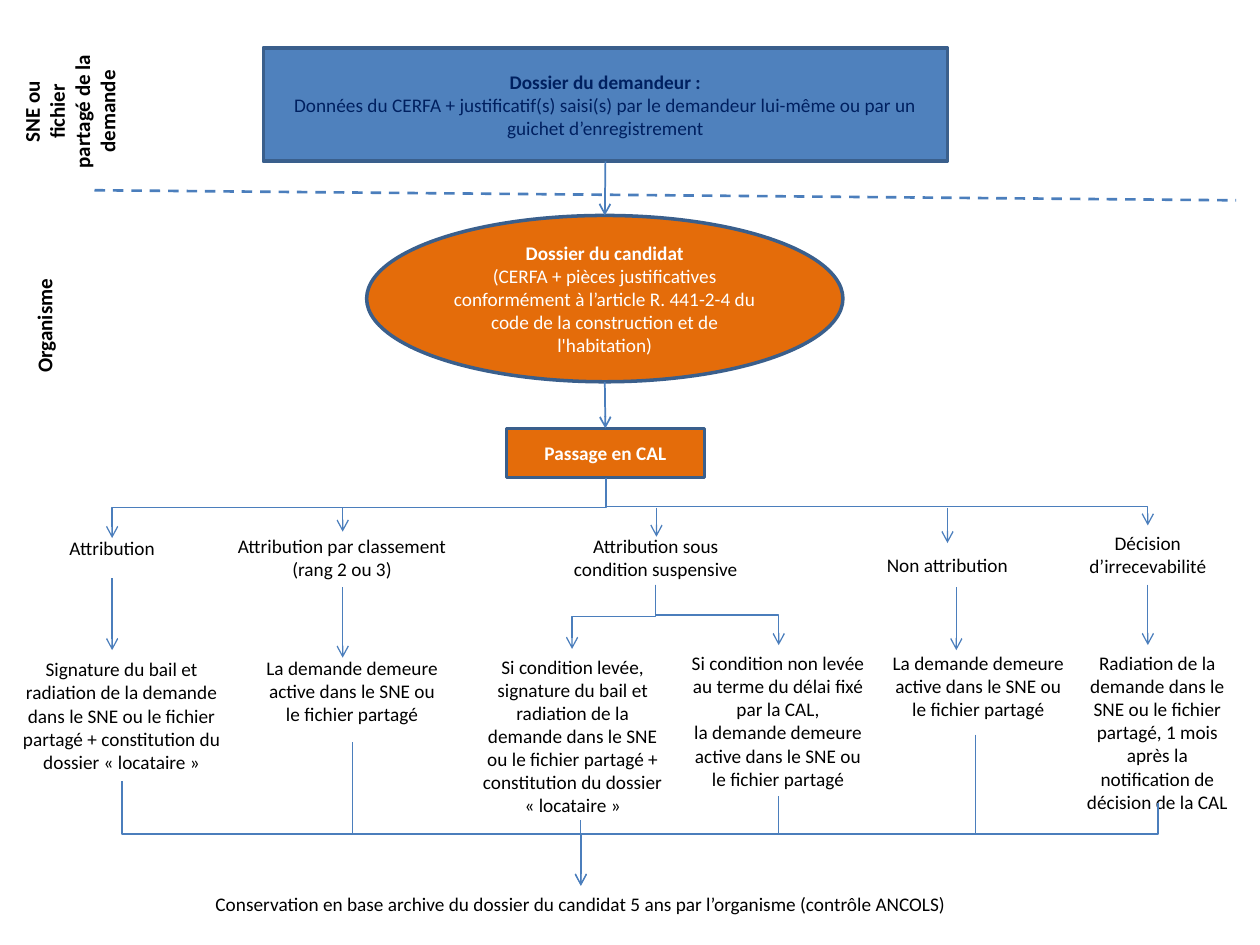
from dataclasses import dataclass

from lxml.etree import SubElement
from pptx import Presentation
from pptx.dml.color import RGBColor
from pptx.enum.dml import MSO_LINE
from pptx.enum.shapes import MSO_CONNECTOR, MSO_SHAPE
from pptx.enum.text import MSO_ANCHOR, MSO_AUTO_SIZE, PP_ALIGN
from pptx.oxml.ns import qn
from pptx.util import Inches, Pt


@dataclass(frozen=True)
class Theme:
    font: str = "Calibri"
    body: float = 11
    band: float = 12
    black: str = "000000"
    white: str = "FFFFFF"
    navy: str = "002060"
    blue: str = "4F81BD"
    orange: str = "E46C0A"
    outline: str = "3A5F8C"
    link: str = "4B7EBC"
    thin: float = 0.75
    medium: float = 1
    dashed: float = 1.5
    border: float = 2


THEME = Theme()


@dataclass(frozen=True)
class Box:
    left: float
    top: float
    width: float
    height: float

    def inner(self, left, top, width, height):
        return Box(self.left + left, self.top + top, width, height)

    def point(self, x, y):
        return self.left + x, self.top + y

    def emu(self):
        return [Inches(v) for v in (self.left, self.top, self.width, self.height)]


def rgb(value):
    return RGBColor.from_string(value)


# Text and shapes
def write(frame, text, color=THEME.black, size=THEME.body, bold_lines=0, align=PP_ALIGN.CENTER):
    frame.word_wrap = True
    frame.text = text
    for index, paragraph in enumerate(frame.paragraphs):
        paragraph.alignment = align
        for run in paragraph.runs:
            run.font.name = THEME.font
            run.font.size = Pt(size)
            run.font.bold = index < bold_lines
            run.font.color.rgb = rgb(color)


def add_label(slide, box, text, **style):
    label = slide.shapes.add_textbox(*box.emu())
    write(label.text_frame, text, **style)
    label.text_frame.auto_size = MSO_AUTO_SIZE.SHAPE_TO_FIT_TEXT
    return label


def add_band_title(slide, box, text):
    title = add_label(slide, box, text, size=THEME.band, bold_lines=1)
    title.text_frame._txBody.bodyPr.set("vert", "vert270")
    return title


def add_step(slide, preset, box, text, fill, color):
    step = slide.shapes.add_shape(preset, *box.emu())
    step.shadow.inherit = False
    step.fill.solid()
    step.fill.fore_color.rgb = rgb(fill)
    step.line.color.rgb = rgb(THEME.outline)
    step.line.width = Pt(THEME.border)
    write(step.text_frame, text, color=color, bold_lines=1)
    step.text_frame.vertical_anchor = MSO_ANCHOR.MIDDLE
    return step


# Lines and arrows
def add_link(slide, start, end, kind=MSO_CONNECTOR.STRAIGHT, width=THEME.thin, arrow=True):
    link = slide.shapes.add_connector(kind, *[Inches(v) for v in (*start, *end)])
    link.line.color.rgb = rgb(THEME.link)
    link.line.width = Pt(width)
    if arrow:
        SubElement(link.line._get_or_add_ln(), qn("a:tailEnd"), type="arrow")
    SubElement(link._element.spPr, qn("a:effectLst"))
    return link


def add_elbow(slide, start, end, bend=0.5):
    """Down, across, down: a quarter-turned elbow; bend is the share of the first drop."""
    (x1, y1), (x2, y2) = start, end
    drop, run = y2 - y1, abs(x2 - x1)
    left, top = (x1 + x2 - drop) / 2, (y1 + y2 - run) / 2
    link = add_link(slide, (left, top), (left + drop, top + run), MSO_CONNECTOR.ELBOW)
    xfrm = link._element.spPr.find(qn("a:xfrm"))
    if x2 > x1:
        xfrm.set("flipH", "1")
    xfrm.set("rot", str((270 if x2 > x1 else 90) * 60000))
    geometry = link._element.spPr.find(qn("a:prstGeom"))
    guides = geometry.find(qn("a:avLst"))
    if guides is None:
        guides = SubElement(geometry, qn("a:avLst"))
    SubElement(guides, qn("a:gd"), name="adj1", fmla=f"val {round(bend * 100000)}")


# Shared registration system
def build_request(slide, box):
    add_band_title(slide, box.inner(0.1, 0, 0.81, 1.11), "SNE ou fichier partagé de la demande")
    request = add_step(
        slide, MSO_SHAPE.RECTANGLE, box.inner(2.09, 0.05, 5.43, 0.9),
        "Dossier du demandeur :\nDonnées du CERFA + justificatif(s) saisi(s) par le demandeur "
        "lui-même ou par un guichet d’enregistrement", THEME.blue, THEME.navy)
    border = add_link(slide, box.point(0.75, 1.18), box.point(9.81, 1.26),
                      width=THEME.dashed, arrow=False)
    border.line.dash_style = MSO_LINE.DASH
    return request


# Candidate file and committee
def build_committee(slide, box, request):
    add_band_title(slide, box.inner(0.2, 0.07, 0.4, 1.61), "Organisme")
    candidate = add_step(
        slide, MSO_SHAPE.OVAL, box.inner(2.91, 0, 3.78, 1.32),
        "Dossier du candidat\n(CERFA + pièces justificatives conformément à l’article "
        "R. 441-2-4 du code de la construction et de l'habitation)", THEME.orange, THEME.white)
    committee = add_step(slide, MSO_SHAPE.RECTANGLE, box.inner(4.02, 1.69, 1.57, 0.39),
                         "Passage en CAL", THEME.orange, THEME.white)
    top = box.point(4.8, 0)
    to_candidate = add_link(slide, top, top, width=THEME.medium)
    to_candidate.begin_connect(request, 2)
    to_candidate.end_connect(candidate, 0)
    to_committee = add_link(slide, box.point(4.8, 1.32), box.point(4.8, 1.69), width=THEME.medium)
    to_committee.end_connect(committee, 0)


# Decisions and what follows from them
KEPT_ACTIVE = "La demande demeure active dans le SNE ou le fichier partagé"
LEASE = ("ignature du bail et radiation de la demande dans le SNE ou le fichier partagé "
         "+ constitution du dossier « locataire »")

# decision, its box, consequence, its box, arrow (x, start, end)
DECISIONS = [
    ("Attribution", (0.3, 0.42, 1.18, 0.29),
     "S" + LEASE, (0.02, 1.38, 1.89, 1.03), (0.89, 0.8, 1.37)),
    ("Attribution par classement (rang 2 ou 3)", (1.73, 0.4, 1.97, 0.47),
     KEPT_ACTIVE, (2.01, 1.37, 1.57, 0.66), (2.72, 0.87, 1.43)),
    ("Non attribution", (6.94, 0.55, 1.3, 0.29),
     KEPT_ACTIVE, (6.98, 1.33, 1.57, 0.66), (7.59, 0.87, 1.37)),
    ("Décision d’irrecevabilité", (8.41, 0.38, 1.4, 0.47),
     "Radiation de la demande dans le SNE ou le fichier partagé, 1 mois après la notification "
     "de décision de la CAL", (8.49, 1.33, 1.39, 1.4), (9.11, 0.85, 1.33)),
]
CONDITIONS = [
    ("Si condition levée,\ns" + LEASE, (3.7, 1.36, 1.69, 1.6), (4.54, 1.36)),
    ("Si condition non levée au terme du délai fixé par la CAL,\n"
     "la demande demeure active dans le SNE ou le fichier partagé",
     (5.39, 1.33, 1.57, 1.21), (6.18, 1.33)),
]


def build_decisions(slide, box):
    # Branches from the committee
    fork = box.point(4.81, 0)
    add_elbow(slide, fork, box.point(0.89, 0.48))
    add_elbow(slide, fork, box.point(9.11, 0.38), 0.61)
    for x, end in ((2.72, 0.43), (5.21, 0.47), (7.52, 0.52)):
        add_link(slide, box.point(x, 0.24), box.point(x, end))

    for decision, place, consequence, target, (x, start, end) in DECISIONS:
        align = PP_ALIGN.LEFT if decision == "Non attribution" else PP_ALIGN.CENTER
        add_label(slide, box.inner(*place), decision, align=align)
        add_label(slide, box.inner(*target), consequence)
        add_link(slide, box.point(x, start), box.point(x, end))

    # Conditional award splits in two
    add_label(slide, box.inner(4.38, 0.4, 1.65, 0.47), "Attribution sous condition suspensive")
    for condition, place, arrival in CONDITIONS:
        add_label(slide, box.inner(*place), condition)
        add_elbow(slide, box.point(5.2, 0.85), box.point(*arrival))


# All branches gather in the archive
def build_archive(slide, box):
    add_label(slide, box.inner(0.5, 0.83, 8.22, 0.29),
              "Conservation en base archive du dossier du candidat 5 ans par l’organisme "
              "(contrôle ANCOLS)")
    bus = 0.42
    archive = box.point(4.61, 0.83)
    for x, start in ((0.97, 0), (9.19, 0.17)):
        add_elbow(slide, box.point(x, start), archive, (bus - start) / (0.83 - start))
    for x, start in ((2.8, -0.31), (4.61, 0.31), (6.18, 0.12), (7.74, -0.37)):
        add_link(slide, box.point(x, start), box.point(x, bus), arrow=False)


def main():
    presentation = Presentation()
    presentation.slide_width, presentation.slide_height = Inches(10), Inches(7.5)
    slide = presentation.slides.add_slide(presentation.slide_layouts[6])
    request = build_request(slide, Box(0, 0.33, 10, 1.26))
    build_committee(slide, Box(0, 1.71, 10, 2.08), request)
    build_decisions(slide, Box(0, 3.79, 10, 2.96))
    build_archive(slide, Box(0, 6.2, 10, 1.12))
    presentation.save("out.pptx")


if __name__ == "__main__":
    main()
